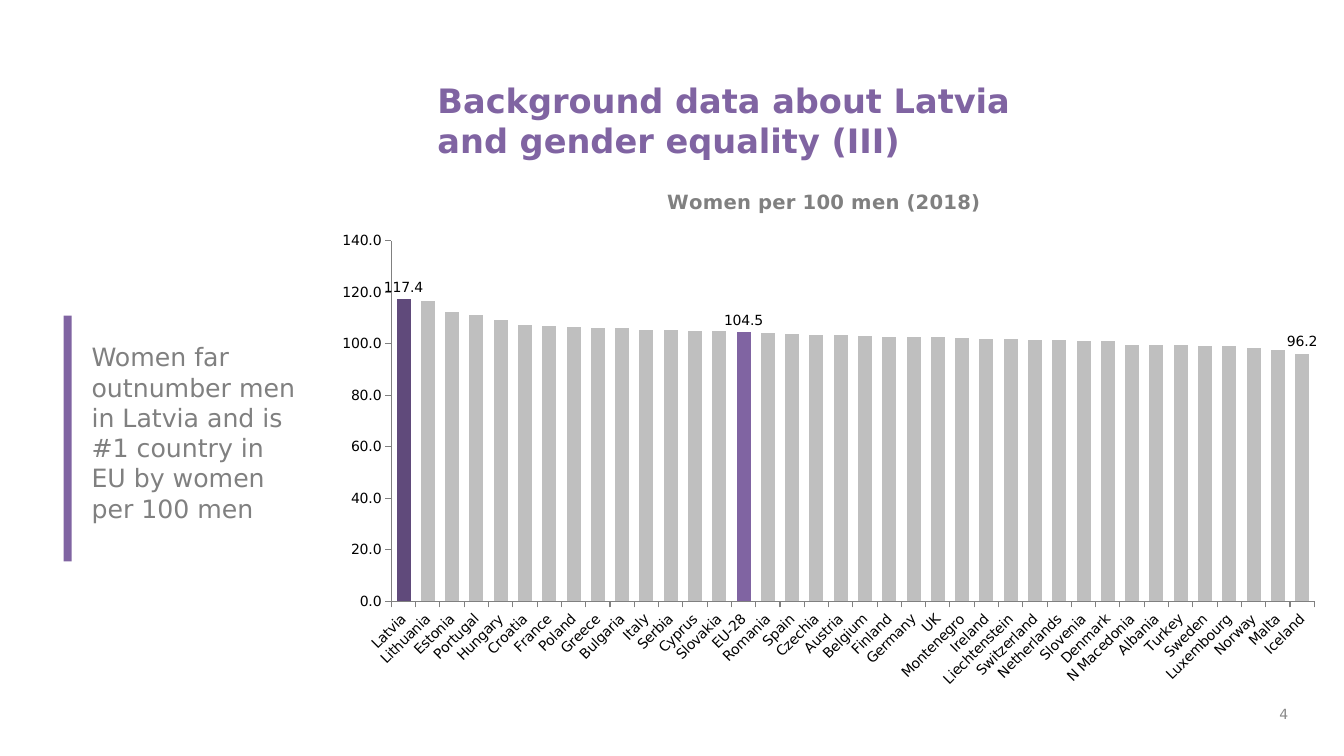
from dataclasses import dataclass

from lxml import etree
from pptx import Presentation
from pptx import util as u
from pptx.chart.data import CategoryChartData
from pptx.dml.color import RGBColor
from pptx.enum import chart as ch, shapes, text
from pptx.oxml import ns

FONT = "DejaVu Sans"
COLORS = {
    "purple": "8064A2",
    "dark": "604A7B",
    "bar": "BFBFBF",
    "grey": "808080",
    "number": "898989",
    "black": "000000",
}

WOMEN_PER_100_MEN = {
    "Latvia": 117.4, "Lithuania": 116.5, "Estonia": 112.4, "Portugal": 111.4,
    "Hungary": 109.3, "Croatia": 107.2, "France": 106.8, "Poland": 106.6,
    "Greece": 106.2, "Bulgaria": 106, "Italy": 105.5, "Serbia": 105.3,
    "Cyprus": 105, "Slovakia": 104.9, "EU-28": 104.5, "Romania": 104.4,
    "Spain": 103.9, "Czechia": 103.3, "Austria": 103.3, "Belgium": 103,
    "Finland": 102.8, "Germany": 102.7, "UK": 102.6, "Montenegro": 102.2,
    "Ireland": 101.9, "Liechtenstein": 101.8, "Switzerland": 101.7,
    "Netherlands": 101.5, "Slovenia": 101.2, "Denmark": 101,
    "N Macedonia": 99.7, "Albania": 99.5, "Turkey": 99.4, "Sweden": 99.1,
    "Luxembourg": 99, "Norway": 98.5, "Malta": 97.7, "Iceland": 96.2,
}
HIGHLIGHTS = {"Latvia": "dark", "EU-28": "purple"}
LABELLED = ("Latvia", "EU-28", "Iceland")
PLOT_LAYOUT = {"layoutTarget": "inner", "xMode": "edge", "yMode": "edge",
               "x": 0.067, "y": 0.133, "w": 0.924, "h": 0.66}


@dataclass
class Label:
    """A block of text; box is left, top, width, height in points."""
    words: str
    box: tuple[float, float, float, float]
    size: float
    color: str
    bold: bool = False
    align: text.PP_ALIGN = text.PP_ALIGN.LEFT
    anchor: text.MSO_ANCHOR = text.MSO_ANCHOR.MIDDLE


TITLE = Label("Background data about Latvia and gender equality (III)",
              (305.3, 53.3, 480.2, 81.4), 24, "purple", True,
              anchor=text.MSO_ANCHOR.TOP)
LABELS = [
    Label("Women far outnumber men in Latvia and is #1 country in EU by women per 100 men",
          (58.3, 233.3, 166.3, 151.2), 18, "grey"),
    Label("4", (895.7, 498.2, 31.7, 23.8), 10, "number", align=text.PP_ALIGN.RIGHT),
]


def rgb(name: str) -> RGBColor:
    return RGBColor.from_string(COLORS[name])


def assign(target, values: dict) -> None:
    for name, value in values.items():
        setattr(target, name, value)


def set_font(font, size: float, color: str, bold: bool = False) -> None:
    assign(font, {"name": FONT, "size": u.Pt(size), "bold": bold})
    font.color.rgb = rgb(color)


def fill_label(sp, label: Label) -> None:
    places = map(u.Pt, label.box)
    assign(sp, dict(zip(("left", "top", "width", "height"), places)))
    tf = sp.text_frame
    assign(tf, {"word_wrap": True, "auto_size": text.MSO_AUTO_SIZE.NONE,
                "vertical_anchor": label.anchor})
    p = tf.paragraphs[0]
    p.alignment = label.align
    r = p.add_run()
    r.text = label.words
    set_font(r.font, label.size, label.color, label.bold)


def add_accent(s) -> None:
    sp = s.shapes.add_shape(shapes.MSO_SHAPE.RECTANGLE,
                            *map(u.Pt, (45.4, 225.4, 5.8, 175.7)))
    sp.shadow.inherit = False
    sp.fill.solid()
    sp.fill.fore_color.rgb = rgb("purple")
    sp.line.fill.background()


def set_plot_layout(chart) -> None:
    area = chart.plots[0]._element.getparent()
    layout = area.find(ns.qn("c:layout"))
    if layout is None:
        layout = etree.Element(ns.qn("c:layout"))
        area.insert(0, layout)
    manual = etree.SubElement(layout, ns.qn("c:manualLayout"))
    for tag, value in PLOT_LAYOUT.items():
        etree.SubElement(manual, ns.qn(f"c:{tag}")).set("val", str(value))


def add_women_chart(s) -> None:
    countries = list(WOMEN_PER_100_MEN)
    data = CategoryChartData()
    data.categories = countries
    data.add_series("Series 1", WOMEN_PER_100_MEN.values())
    chart = s.shapes.add_chart(ch.XL_CHART_TYPE.COLUMN_CLUSTERED,
                               *map(u.Pt, (231.8, 120.2, 713.5, 390.2)), data).chart
    set_font(chart.font, 10, "black")
    assign(chart, {"has_legend": False, "has_title": True})

    # Chart title
    chart.chart_title.include_in_layout = False
    r = chart.chart_title.text_frame.paragraphs[0].add_run()
    r.text = "Women per 100 men (2018)"
    set_font(r.font, 14, "grey", True)

    # Axes
    for axis in (chart.category_axis, chart.value_axis):
        assign(axis, {"has_major_gridlines": False,
                      "major_tick_mark": ch.XL_TICK_MARK.OUTSIDE,
                      "minor_tick_mark": ch.XL_TICK_MARK.NONE})
        axis.format.line.color.rgb = rgb("grey")
        axis.format.line.width = u.Pt(0.75)
        set_font(axis.tick_labels.font, 10, "black")
    body = chart.category_axis._element.find(f"{ns.qn('c:txPr')}/{ns.qn('a:bodyPr')}")
    body.set("rot", str(-45 * 60000))
    assign(chart.value_axis, {"minimum_scale": 0, "maximum_scale": 140, "major_unit": 20})
    assign(chart.value_axis.tick_labels,
           {"number_format": "#,##0.0", "number_format_is_linked": False})

    # Columns, highlights and value labels
    plot = chart.plots[0]
    assign(plot, {"gap_width": 73, "vary_by_categories": False})
    series = plot.series[0]
    series.invert_if_negative = False
    series.data_labels.show_value = False
    fills = [(series.format.fill, "bar")]
    fills += [(series.points[countries.index(country)].format.fill, color)
              for country, color in HIGHLIGHTS.items()]
    for fill, color in fills:
        fill.solid()
        fill.fore_color.rgb = rgb(color)
    for country in LABELLED:
        label = series.points[countries.index(country)].data_label
        label.position = ch.XL_LABEL_POSITION.OUTSIDE_END
        set_font(label.font, 10, "black")
    set_plot_layout(chart)


def main() -> None:
    prs = Presentation()
    assign(prs, {"slide_width": u.Pt(960), "slide_height": u.Pt(540)})
    s = prs.slides.add_slide(prs.slide_layouts[5])
    fill_label(s.shapes.title, TITLE)
    add_accent(s)
    for label in LABELS:
        fill_label(s.shapes.add_textbox(*map(u.Pt, label.box)), label)
    add_women_chart(s)
    prs.save("out.pptx")


if __name__ == "__main__":
    main()
